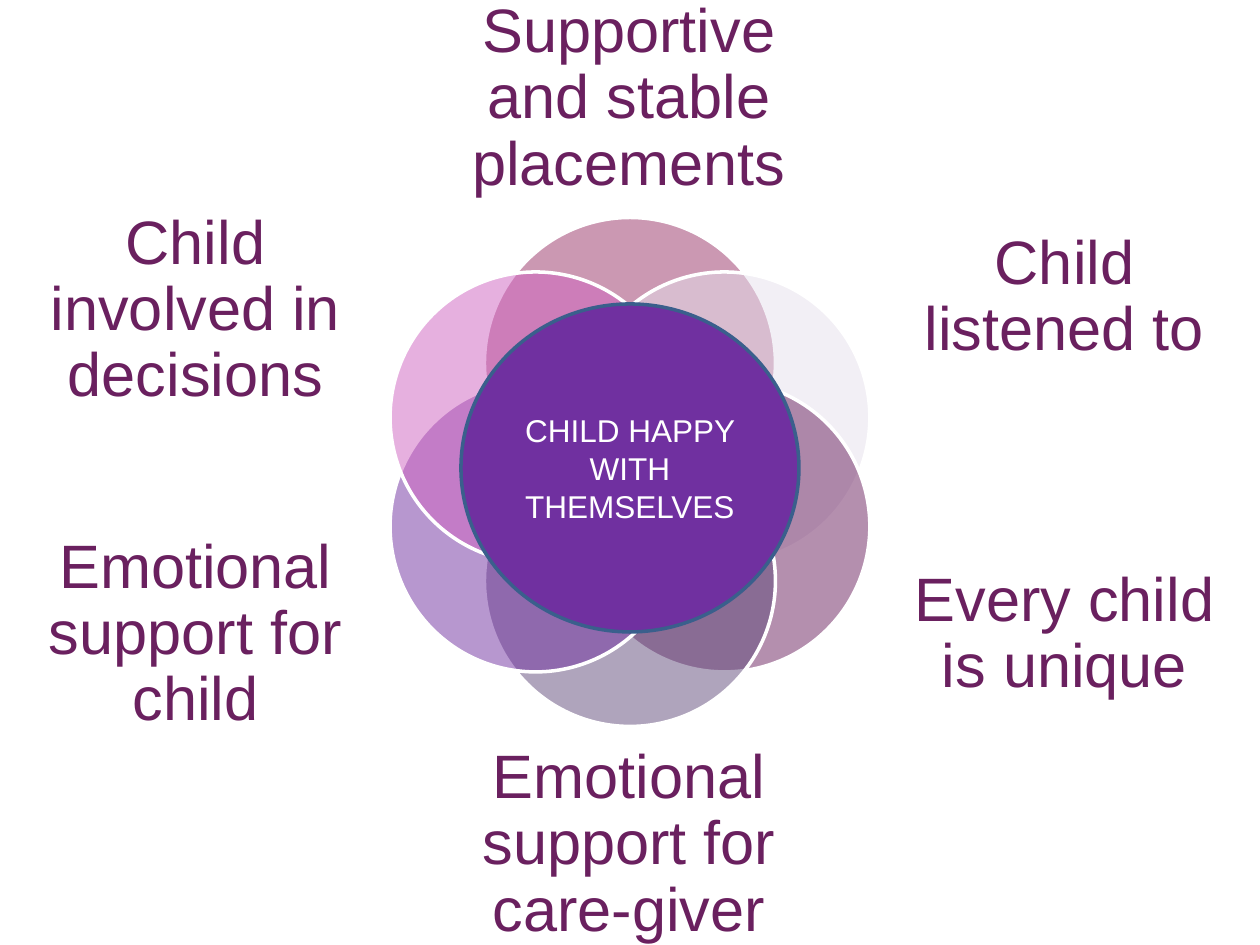
import math

from lxml import etree
from pptx import Presentation
from pptx.dml.color import RGBColor
from pptx.enum.shapes import MSO_SHAPE
from pptx.enum.text import MSO_ANCHOR, PP_ALIGN
from pptx.oxml.ns import qn
from pptx.util import Pt

OVAL = MSO_SHAPE.OVAL
CONNECTOR = MSO_SHAPE.FLOWCHART_CONNECTOR
MIDDLE = MSO_ANCHOR.MIDDLE
CENTER = PP_ALIGN.CENTER

EMU_PER_PX = 914400 / 126
FONT = "Arial"
COLORS = {
    "rose": "993366",
    "mist": "E6E0EC",
    "plum": "6A205F",
    "slate": "604A7B",
    "purple": "7030A0",
    "pink": "CF63C0",
    "white": "FFFFFF",
    "blue": "3A5F8C",
}

RING_CENTER = (630, 472)
RING_RADIUS = 109
PETAL_SIZE = 291

# Clockwise from the top: petal colour, label, label box (left, top, width, height)
PETALS = [
    ("rose", "Supportive and stable placements", (447, 0, 364, 198)),
    ("mist", "Child listened to", (892, 189, 345, 218)),
    ("plum", "Every child is unique", (892, 513, 345, 243)),
    ("slate", "Emotional support for care-giver", (447, 746, 364, 198)),
    ("purple", "Emotional support for child", (23, 513, 345, 243)),
    ("pink", "Child involved in decisions", (23, 189, 345, 243)),
]


def px(value):
    return round(value * EMU_PER_PX)


def rgb(name):
    return RGBColor.from_string(COLORS[name])


def add_disc(shapes, kind, box, fill, line):
    sp = shapes.add_shape(kind, *map(px, box))
    sp.shadow.inherit = False
    sp.fill.solid()
    sp.fill.fore_color.rgb = rgb(fill)
    sp.line.color.rgb = rgb(line)
    sp.line.width = Pt(2)
    return sp


def set_opacity(sp, percent):
    color = sp.fill._xPr.find(qn("a:solidFill"))[0]
    etree.SubElement(color, qn("a:alpha")).set("val", str(percent * 1000))


def set_text(sp, text, size, color):
    tf = sp.text_frame
    tf.word_wrap = True
    tf.vertical_anchor = MIDDLE
    p = tf.paragraphs[0]
    p.text = text
    p.alignment = CENTER
    p.font.name = FONT
    p.font.size = Pt(size)
    p.font.color.rgb = rgb(color)
    return tf


def add_petal(shapes, angle, color):
    left = RING_CENTER[0] + RING_RADIUS * math.sin(angle) - PETAL_SIZE / 2
    top = RING_CENTER[1] - RING_RADIUS * math.cos(angle) - PETAL_SIZE / 2
    petal = add_disc(shapes, OVAL, (left, top, PETAL_SIZE, PETAL_SIZE), color, "white")
    set_opacity(petal, 50)


def add_label(shapes, text, box):
    tf = set_text(shapes.add_textbox(*map(px, box)), text, 35, "plum")
    tf.margin_left = tf.margin_top = tf.margin_right = tf.margin_bottom = 0
    tf.paragraphs[0].line_spacing = 0.9


def main():
    prs = Presentation()
    prs.slide_width, prs.slide_height = px(1260), px(945)
    s = prs.slides.add_slide(prs.slide_layouts[6])

    ring = s.shapes.add_group_shape().shapes
    for i, (color, text, box) in enumerate(PETALS):
        add_petal(ring, i * math.tau / len(PETALS), color)
        add_label(ring, text, box)

    core = add_disc(s.shapes, CONNECTOR, (461, 304, 338, 328), "purple", "blue")
    set_text(core, "CHILD HAPPY WITH THEMSELVES", 18, "white")
    prs.save("out.pptx")


if __name__ == "__main__":
    main()
